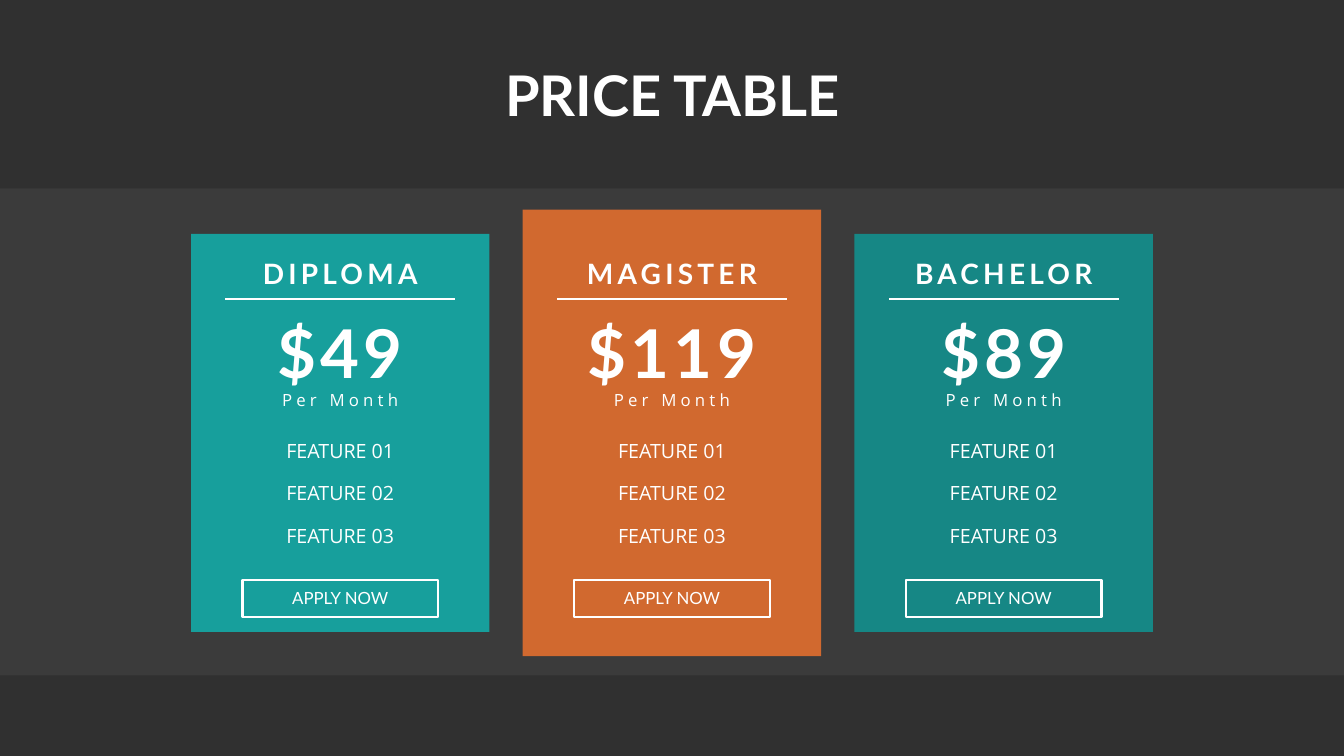
from dataclasses import dataclass

from lxml import etree
from pptx import Presentation
from pptx.dml.color import RGBColor
from pptx.enum.shapes import MSO_CONNECTOR, MSO_SHAPE
from pptx.enum.text import MSO_ANCHOR, MSO_AUTO_SIZE, PP_ALIGN
from pptx.oxml.ns import qn
from pptx.util import Inches, Pt

RECT = MSO_SHAPE.RECTANGLE
STRAIGHT = MSO_CONNECTOR.STRAIGHT
CENTER = PP_ALIGN.CENTER
TOP, MIDDLE = MSO_ANCHOR.TOP, MSO_ANCHOR.MIDDLE
FIT = MSO_AUTO_SIZE.SHAPE_TO_FIT_TEXT


@dataclass(frozen=True)
class Theme:
    background: str = "303030"
    band: str = "464646"
    white: str = "FFFFFF"
    teal: str = "0FB9B5"
    orange: str = "F7752D"
    dark_teal: str = "0D9B98"
    heading: str = "Lato"
    body: str = "Open Sans"
    title_size: int = 40
    price_size: int = 48
    name_size: int = 20
    feature_size: int = 14
    small_size: int = 12
    line_width: float = 1.5
    spacing: int = 3


THEME = Theme()
WIDTH, HEIGHT = 13.33, 7.5
CARD_WIDTH, CARD_PITCH = 2.96, 3.29
PLANS = [
    ("DIPLOMA", "$49", THEME.teal, 3.95),
    ("MAGISTER", "$119", THEME.orange, 4.43),
    ("BACHELOR", "$89", THEME.dark_teal, 3.95),
]
FEATURES = ["FEATURE 01", "FEATURE 02", "FEATURE 03"]


def rgb(color):
    return RGBColor.from_string(color)


def write(tf, text, size, font, bold=False, spacing=0):
    tf.text = text
    p = tf.paragraphs[0]
    p.alignment = CENTER
    r = p.runs[0]
    r.font.size = Pt(size)
    r.font.name = font
    r.font.bold = bold
    r.font.color.rgb = rgb(THEME.white)
    if spacing:
        r.font._element.set("spc", str(spacing * 100))
    return p


def add_text(s, box, text, size, font, bold=False, spacing=0, wrap=True, anchor=MIDDLE):
    tf = s.shapes.add_textbox(*map(Inches, box)).text_frame
    tf.word_wrap = wrap
    tf.auto_size = FIT
    tf.vertical_anchor = anchor
    write(tf, text, size, font, bold, spacing)


def add_panel(s, box, color, opacity):
    sp = s.shapes.add_shape(RECT, *map(Inches, box))
    sp.shadow.inherit = False
    sp.fill.solid()
    sp.fill.fore_color.rgb = rgb(color)
    sp.line.fill.background()
    srgb = sp.fill._xPr.find(qn("a:solidFill")).find(qn("a:srgbClr"))
    etree.SubElement(srgb, qn("a:alpha")).set("val", str(opacity * 1000))


def add_rule(s, left, right, y):
    line = s.shapes.add_connector(STRAIGHT, *map(Inches, (left, y, right, y)))
    line.line.color.rgb = rgb(THEME.white)
    line.line.width = Pt(THEME.line_width)
    etree.SubElement(line._element.spPr, qn("a:effectLst"))


def add_button(s, box, text):
    left, top, width, height = box
    sp = s.shapes.add_shape(RECT, *map(Inches, box))
    sp.shadow.inherit = False
    sp.fill.background()
    sp.line.color.rgb = rgb(THEME.white)
    sp.line.width = Pt(THEME.line_width)
    label = (left + (width - 1.18) / 2, top + 0.03, 1.18, 0.3)
    add_text(s, label, text, THEME.small_size, THEME.heading, wrap=False, anchor=TOP)


def add_card(s, box, name, price, color):
    left, top, width, height = box
    center, middle = left + width / 2, top + height / 2

    def centered(offset, w, h):
        return center - w / 2, middle + offset, w, h

    add_panel(s, box, color, 80)
    add_text(s, centered(-1.8, 2.46, 0.44), name, THEME.name_size, THEME.heading,
             True, THEME.spacing)
    add_rule(s, center - 1.14, center + 1.14, middle - 1.33)
    add_text(s, centered(-1.26, 2.46, 0.91), price, THEME.price_size, THEME.heading,
             True, THEME.spacing)
    add_text(s, centered(-0.48, 2.46, 0.3), "Per Month", THEME.small_size, THEME.body,
             spacing=THEME.spacing)
    for i, feature in enumerate(FEATURES):
        add_text(s, centered(0.01 + 0.42 * i, 1.28, 0.34), feature, THEME.feature_size,
                 THEME.body, wrap=False, anchor=TOP)
    add_button(s, centered(1.46, 1.94, 0.37), "APPLY NOW")


def add_title(s, box, text):
    title = s.shapes.title
    title.left, title.top, title.width, title.height = map(Inches, box)
    tf = title.text_frame
    tf.word_wrap = True
    tf.auto_size = FIT
    tf.vertical_anchor = MIDDLE
    tf.margin_left = tf.margin_right = Inches(0.1)
    tf.margin_top = tf.margin_bottom = Inches(0.12)
    p = write(tf, text, THEME.title_size, THEME.heading, True)
    p.line_spacing = 0.9
    p.space_before = Pt(0)


def add_price_band(s, box):
    left, top, width, height = box
    add_panel(s, box, THEME.band, 50)
    middle = top + height / 2 + 0.01
    first = left + (width - CARD_WIDTH) / 2 - CARD_PITCH
    for i, (name, price, color, card_height) in enumerate(PLANS):
        card = (first + i * CARD_PITCH, middle - card_height / 2, CARD_WIDTH, card_height)
        add_card(s, card, name, price, color)


def main():
    prs = Presentation()
    prs.slide_width, prs.slide_height = Inches(WIDTH), Inches(HEIGHT)
    s = prs.slides.add_slide(prs.slide_layouts[5])
    s.background.fill.solid()
    s.background.fill.fore_color.rgb = rgb(THEME.background)
    add_title(s, (2.16, 0.56, 9.02, 0.84), "PRICE TABLE")
    add_price_band(s, (0, 1.87, WIDTH, 4.83))
    prs.save("out.pptx")


if __name__ == "__main__":
    main()
